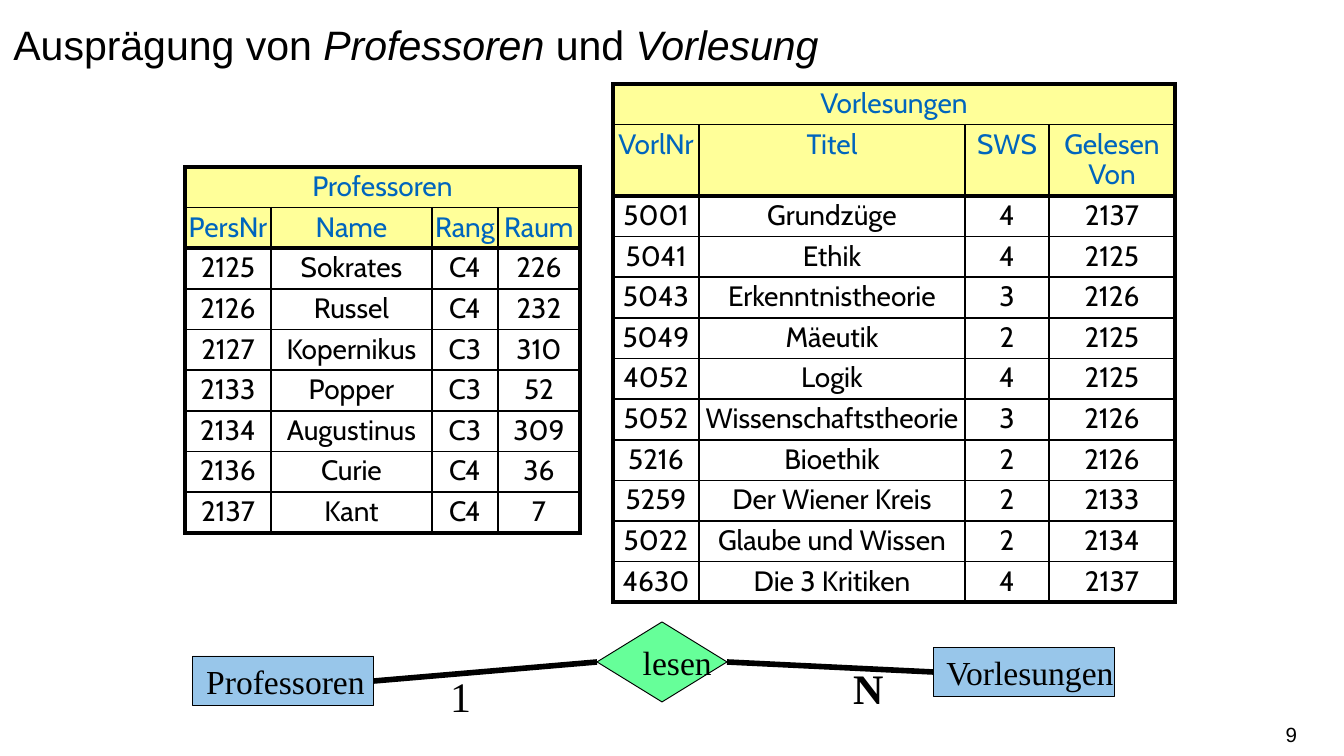
import pptx
import pptx.util
import pptx.dml.color
import pptx.enum.shapes
import pptx.enum.text
import pptx.oxml.ns
from lxml import etree

# Content
TITLE = [("Ausprägung von ", False), ("Professoren ", True),
         ("und ", False), ("Vorlesung", True)]
TABLES = [
    {"name": "Professoren", "at": (185, 167),
     "cols": [86, 161, 66, 82], "head_h": 40,
     "head": ["PersNr", "Name", "Rang", "Raum"],
     "rows": [
         ("2125", "Sokrates", "C4", "226"),
         ("2126", "Russel", "C4", "232"),
         ("2127", "Kopernikus", "C3", "310"),
         ("2133", "Popper", "C3", "52"),
         ("2134", "Augustinus", "C3", "309"),
         ("2136", "Curie", "C4", "36"),
         ("2137", "Kant", "C4", "7")]},
    {"name": "Vorlesungen", "at": (613, 84),
     "cols": [86, 266, 84, 126], "head_h": 71,
     "head": ["VorlNr", "Titel", "SWS", "Gelesen Von"],
     "rows": [
         ("5001", "Grundzüge", "4", "2137"),
         ("5041", "Ethik", "4", "2125"),
         ("5043", "Erkenntnistheorie", "3", "2126"),
         ("5049", "Mäeutik", "2", "2125"),
         ("4052", "Logik", "4", "2125"),
         ("5052", "Wissenschaftstheorie", "3", "2126"),
         ("5216", "Bioethik", "2", "2126"),
         ("5259", "Der Wiener Kreis", "2", "2133"),
         ("5022", "Glaube und Wissen", "2", "2134"),
         ("4630", "Die 3 Kritiken", "4", "2137")]},
]
NODES = [  # text, shape, box, fill
    ("Professoren", "RECTANGLE", (193, 656, 181, 50), "blue"),
    ("lesen", "DIAMOND", (597, 622, 130, 80), "green"),
    ("Vorlesungen", "RECTANGLE", (933, 647, 181, 50), "blue"),
]
LINKS = [("Professoren", 3, "lesen", 1), ("Vorlesungen", 1, "lesen", 3)]
ROLES = [("1", (437, 664, 48, 65), False), ("N", (840, 656, 58, 65), True)]
PAGE = ("9", (996, 714, 301, 40))

COLORS = {"black": "000000", "head": "0065BD", "yellow": "FFFF99",
          "blue": "98C6EA", "green": "66FF99"}
SERIF = "Times New Roman"
ROW_H = 40
THIN, THICK = 1, 2.25
ALIGN = pptx.enum.text.PP_ALIGN
ANCHOR = pptx.enum.text.MSO_ANCHOR
Pt = pptx.util.Pt


def px(n):
    return round(n * 914400 / 134.4)


def box(dims):
    return [px(n) for n in dims]


def rgb(name):
    return pptx.dml.color.RGBColor.from_string(COLORS[name])


def add_run(para, text, font, size, color="black", bold=None, ital=None):
    run = para.add_run()
    run.text = text
    run.font.name, run.font.size = font, Pt(size)
    run.font.bold, run.font.italic = bold, ital
    run.font.color.rgb = rgb(color)


def edge(cell, side, width):
    props = cell._tc.get_or_add_tcPr()
    tag = pptx.oxml.ns.qn
    line = etree.SubElement(props, tag("a:ln" + side), w=str(Pt(width)))
    fill = etree.SubElement(line, tag("a:solidFill"))
    etree.SubElement(fill, tag("a:srgbClr"), val=COLORS["black"])


def add_table(slide, data):
    grid = [[data["name"], "", "", ""], data["head"], *data["rows"]]
    tall = [ROW_H, data["head_h"]] + [ROW_H] * len(data["rows"])
    cols = data["cols"]
    dims = box((*data["at"], sum(cols), sum(tall)))
    table = slide.shapes.add_table(len(grid), len(cols), *dims).table
    table.first_row = table.horz_banding = False
    for col, width in zip(table.columns, cols):
        col.width = px(width)
    for row, height in zip(table.rows, tall):
        row.height = px(height)
    end_r, end_c = len(grid) - 1, len(cols) - 1
    table.cell(0, 0).merge(table.cell(0, end_c))

    for r, line in enumerate(grid):
        for c, text in enumerate(line):
            cell = table.cell(r, c)
            # Thick frame and header rule, thin lines inside
            outer = {"L": c == 0, "R": c == end_c or cell.is_merge_origin,
                     "T": r in (0, 2), "B": r in (1, end_r)}
            for side, thick in outer.items():
                if thick or side in "TB" or not cell.is_spanned:
                    edge(cell, side, THICK if thick else THIN)
            cell.margin_left = cell.margin_right = 0
            cell.margin_top = cell.margin_bottom = px(5)
            if r < 2:
                cell.fill.solid()
                cell.fill.fore_color.rgb = rgb("yellow")
            else:
                cell.fill.background()
            if text:
                para = cell.text_frame.paragraphs[0]
                para.alignment, para.line_spacing = ALIGN.CENTER, 0.9
                add_run(para, text, "Cabin", 15,
                        "head" if r < 2 else "black")


def add_node(slide, text, kind, dims, color):
    kind = getattr(pptx.enum.shapes.MSO_SHAPE, kind)
    shape = slide.shapes.add_shape(kind, *box(dims))
    shape.shadow.inherit = False
    shape.fill.solid()
    shape.fill.fore_color.rgb = rgb(color)
    shape.line.color.rgb, shape.line.width = rgb("black"), Pt(0.5)
    frame = shape.text_frame
    frame.word_wrap, frame.vertical_anchor = False, ANCHOR.MIDDLE
    frame.paragraphs[0].alignment = ALIGN.LEFT
    add_run(frame.paragraphs[0], text, SERIF, 18)
    return shape


def add_link(slide, start, out, end, into):
    kind = pptx.enum.shapes.MSO_CONNECTOR.STRAIGHT
    link = slide.shapes.add_connector(kind, 0, 0, 0, 0)
    link.begin_connect(start, out)
    link.end_connect(end, into)
    link.line.color.rgb, link.line.width = rgb("black"), Pt(3)
    etree.SubElement(link._element.spPr, pptx.oxml.ns.qn("a:effectLst"))


def main():
    deck = pptx.Presentation()
    deck.slide_width, deck.slide_height = px(1344), px(756)
    slide = deck.slides.add_slide(deck.slide_layouts[5])

    # Title
    title = slide.shapes.title
    title.left, title.top, title.width, title.height = box((0, 0, 1344, 126))
    frame = title.text_frame
    frame.auto_size = pptx.enum.text.MSO_AUTO_SIZE.NONE
    frame.vertical_anchor = ANCHOR.TOP
    para = frame.paragraphs[0]
    para.alignment, para.line_spacing = ALIGN.LEFT, 1.25
    for text, ital in TITLE:
        add_run(para, text, "Arial", 22, ital=ital)

    # Tables
    for data in TABLES:
        add_table(slide, data)

    # Entity diagram
    nodes = {node[0]: add_node(slide, *node) for node in NODES}
    for start, out, end, into in LINKS:
        add_link(slide, nodes[start], out, nodes[end], into)
    for text, dims, bold in ROLES:
        frame = slide.shapes.add_textbox(*box(dims)).text_frame
        frame.word_wrap = False
        add_run(frame.paragraphs[0], text, SERIF, 22.5, bold=bold)

    # Page number
    text, dims = PAGE
    frame = slide.shapes.add_textbox(*box(dims)).text_frame
    frame.word_wrap, frame.vertical_anchor = True, ANCHOR.MIDDLE
    frame.margin_left = frame.margin_right = 0
    frame.paragraphs[0].alignment = ALIGN.RIGHT
    add_run(frame.paragraphs[0], text, "Arial", 11)

    deck.save("out.pptx")


if __name__ == "__main__":
    main()
